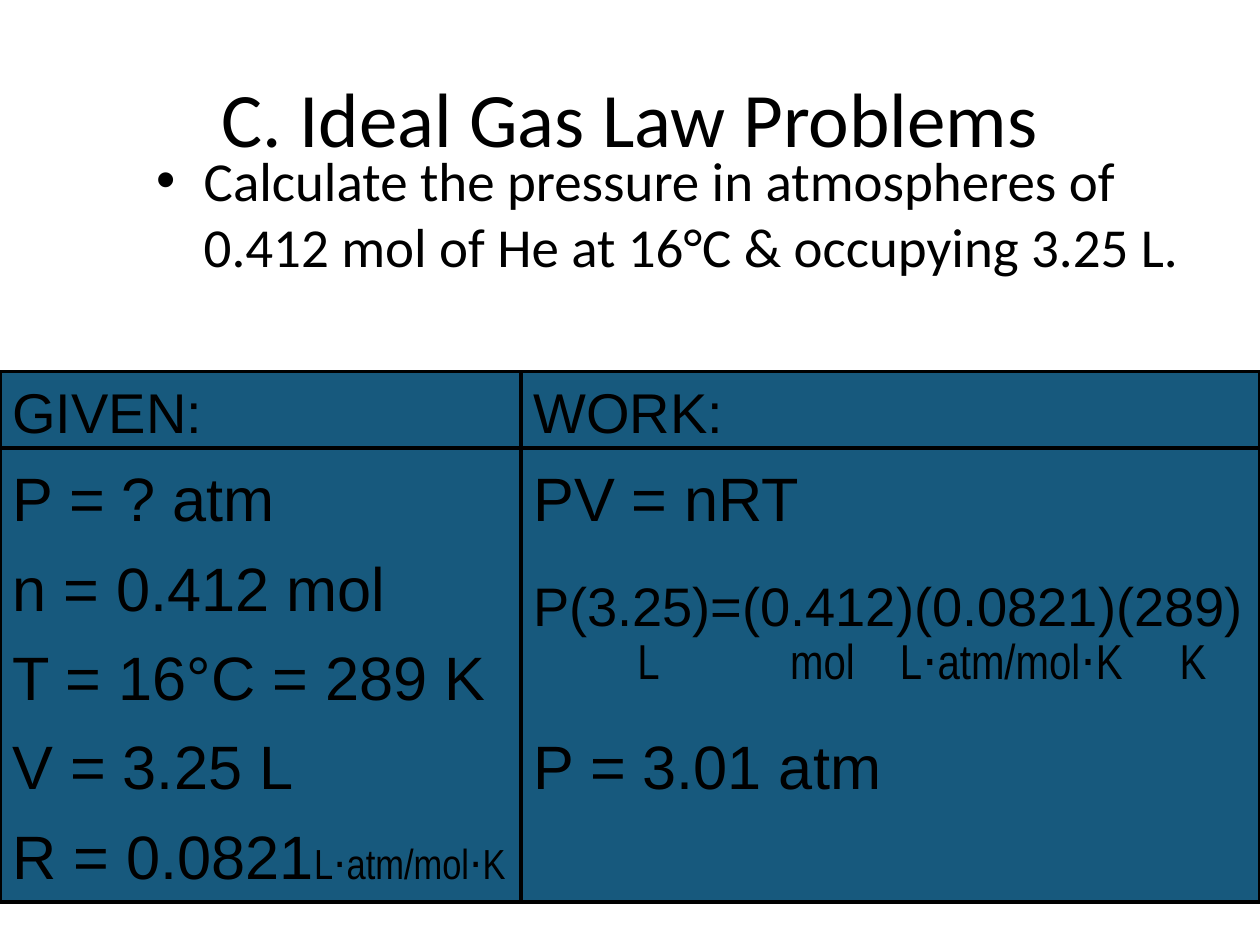
from dataclasses import dataclass

from lxml.etree import SubElement
from pptx import Presentation
from pptx.dml.color import RGBColor
from pptx.enum.shapes import MSO_CONNECTOR, MSO_SHAPE
from pptx.enum.text import MSO_ANCHOR, MSO_AUTO_SIZE, PP_ALIGN
from pptx.oxml.ns import qn
from pptx.util import Cm, Pt


@dataclass(frozen=True)
class Theme:
    ink: RGBColor = RGBColor(0x00, 0x00, 0x00)
    panel: RGBColor = RGBColor(0x17, 0x59, 0x7D)
    heading_font: str = "Calibri"
    work_font: str = "Arial"
    unit_font: str = "Arial Narrow"
    title_size: float = 44
    body_size: float = 31.4
    label_size: float = 32
    line_size: float = 35
    equation_size: float = 31
    unit_size: float = 28
    small_unit_size: float = 24
    rule_width: float = 2.25
    line_gap: float = 9
    wide_gap: float = 22


THEME = Theme()
SLIDE_WIDTH, SLIDE_HEIGHT = 25.4, 19.05
PANEL_TOP, PANEL_HEIGHT = 7.49, 10.69
HEADER_BOTTOM = 9.04
COLUMN_SPLIT = 10.5
COLUMN_HEIGHT = 9.8
UNIT_TABS = (2.1, 5.18, 7.39, 13.03)


def place(shape, left, top, width, height):
    shape.left, shape.top = Cm(left), Cm(top)
    shape.width, shape.height = Cm(width), Cm(height)


def add_run(paragraph, text, size, font=THEME.work_font):
    run = paragraph.add_run()
    run.text = text
    run.font.size = Pt(size)
    run.font.name = font
    run.font.color.rgb = THEME.ink


def fill_placeholder(placeholder, text, size):
    frame = placeholder.text_frame
    frame.auto_size = MSO_AUTO_SIZE.NONE
    paragraph = frame.paragraphs[0]
    paragraph.space_before = Pt(0)
    add_run(paragraph, text, size, THEME.heading_font)
    return paragraph


def add_panel(slide):
    panel = slide.shapes.add_shape(
        MSO_SHAPE.RECTANGLE, Cm(0), Cm(PANEL_TOP), Cm(SLIDE_WIDTH), Cm(PANEL_HEIGHT)
    )
    panel.shadow.inherit = False
    panel.fill.solid()
    panel.fill.fore_color.rgb = THEME.panel
    panel.line.color.rgb = THEME.ink
    panel.line.width = Pt(THEME.rule_width)


def add_rule(slide, start, end):
    rule = slide.shapes.add_connector(
        MSO_CONNECTOR.STRAIGHT, *(Cm(value) for value in start + end)
    )
    rule.line.color.rgb = THEME.ink
    rule.line.width = Pt(THEME.rule_width)
    SubElement(rule._element.spPr, qn("a:effectLst"))


def add_column(slide, left, width, label):
    """Add a text column headed by its label and return its text frame."""
    box = slide.shapes.add_textbox(Cm(left), Cm(PANEL_TOP), Cm(width), Cm(COLUMN_HEIGHT))
    frame = box.text_frame
    frame.word_wrap = True
    heading = frame.paragraphs[0]
    heading.space_before = Pt(2.5)
    add_run(heading, label, THEME.label_size)
    return frame


def add_line(frame, text, size=THEME.line_size, gap=THEME.line_gap):
    paragraph = frame.add_paragraph()
    paragraph.space_before = Pt(gap)
    add_run(paragraph, text, size)
    return paragraph


def add_unit_line(frame, units):
    """Set each unit at its own tab stop, under the number it belongs to."""
    paragraph = frame.add_paragraph()
    paragraph.line_spacing = 0.88
    tab_list = SubElement(paragraph._p.get_or_add_pPr(), qn("a:tabLst"))
    for position, unit in zip(UNIT_TABS, units):
        SubElement(tab_list, qn("a:tab"), pos=str(Cm(position)), algn="l")
        add_run(paragraph, "\t" + unit, THEME.unit_size, THEME.unit_font)


def add_given(slide):
    frame = add_column(slide, 0, COLUMN_SPLIT, "GIVEN:")
    for text in ("P = ? atm", "n = 0.412 mol", "T = 16°C = 289 K", "V = 3.25 L"):
        add_line(frame, text)
    constant = add_line(frame, "R = 0.0821")
    add_run(constant, "L⋅atm/mol⋅K", THEME.small_unit_size, THEME.unit_font)


def add_work(slide):
    frame = add_column(slide, COLUMN_SPLIT, SLIDE_WIDTH - COLUMN_SPLIT, "WORK:")
    add_line(frame, "PV = nRT")
    add_line(frame, "P(3.25)=(0.412)(0.0821)(289)", THEME.equation_size, THEME.wide_gap)
    add_unit_line(frame, ("L", "mol", "L⋅atm/mol⋅K", "K"))
    add_line(frame, "P = 3.01 atm", gap=THEME.wide_gap)


def main():
    presentation = Presentation()
    presentation.slide_width, presentation.slide_height = Cm(SLIDE_WIDTH), Cm(SLIDE_HEIGHT)
    slide = presentation.slides.add_slide(presentation.slide_layouts[1])

    title, body = slide.shapes.title, slide.placeholders[1]
    place(title, 1.27, 0.76, 22.86, 3.18)
    title.text_frame.vertical_anchor = MSO_ANCHOR.MIDDLE
    heading = fill_placeholder(title, "C. Ideal Gas Law Problems", THEME.title_size)
    heading.alignment = PP_ALIGN.CENTER
    place(body, 2.9, 2.82, 22.5, 3.68)
    fill_placeholder(
        body,
        "Calculate the pressure in atmospheres of 0.412 mol of He at 16°C "
        "& occupying 3.25 L.",
        THEME.body_size,
    )

    add_panel(slide)
    add_given(slide)
    add_work(slide)
    add_rule(slide, (COLUMN_SPLIT, PANEL_TOP), (COLUMN_SPLIT, PANEL_TOP + PANEL_HEIGHT))
    add_rule(slide, (0, HEADER_BOTTOM), (SLIDE_WIDTH, HEADER_BOTTOM))
    presentation.save("out.pptx")


if __name__ == "__main__":
    main()
